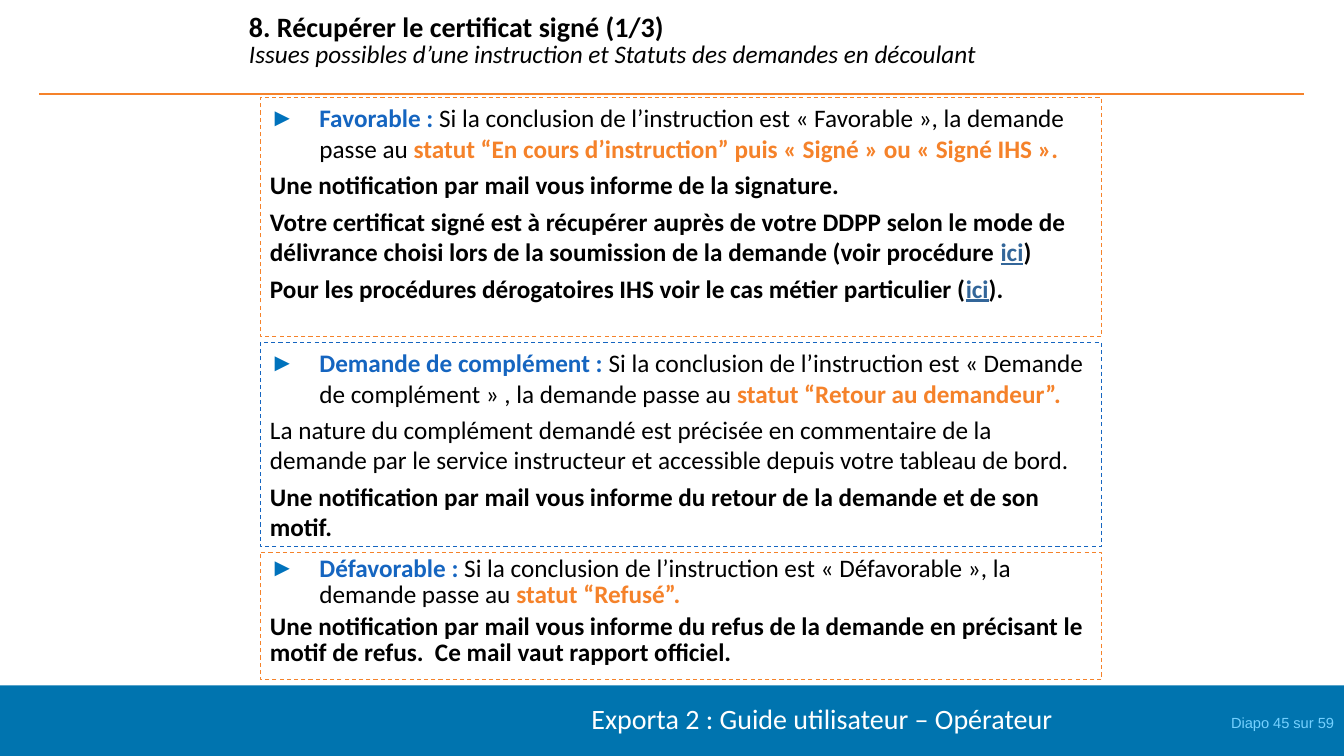
from dataclasses import dataclass

from lxml import etree
from pptx import Presentation
from pptx.dml.color import RGBColor
from pptx.enum.dml import MSO_LINE
from pptx.enum.shapes import MSO_CONNECTOR, MSO_SHAPE
from pptx.enum.text import MSO_ANCHOR, PP_ALIGN
from pptx.oxml.ns import qn
from pptx.util import Pt

RECTANGLE = MSO_SHAPE.RECTANGLE
STRAIGHT = MSO_CONNECTOR.STRAIGHT
DASH = MSO_LINE.DASH
TOP, MIDDLE = MSO_ANCHOR.TOP, MSO_ANCHOR.MIDDLE
LEFT, CENTER, RIGHT = PP_ALIGN.LEFT, PP_ALIGN.CENTER, PP_ALIGN.RIGHT

COLORS = {
    "black": "000000",
    "white": "FFFFFF",
    "band": "0074AF",
    "number": "75D1FF",
    "orange": "F5822A",
    "blue": "1565C0",
    "bullet": "0072BC",
    "link": "336699",
}
BOX_LEFT, BOX_WIDTH = 185.76, 601.2
HANGING = 35.28


@dataclass(frozen=True)
class Run:
    text: str
    color: str = "black"
    bold: bool = False
    italic: bool = False
    underline: bool = False
    size: float = 18
    font: str = "Calibri"


@dataclass(frozen=True)
class Line:
    runs: tuple[Run, ...]
    bullet: bool = False


@dataclass(frozen=True)
class Outcome:
    top: float
    height: float
    border: str
    lines: tuple[Line, ...]
    line_spacing: float = 1.0


def bold(text: str) -> Run:
    return Run(text, bold=True)


def link(text: str) -> Run:
    return Run(text, "link", bold=True, underline=True)


def verdict(label: str, condition: str, status: str) -> Line:
    runs = Run(label, "blue", bold=True), Run(condition), Run(status, "orange", bold=True)
    return Line(runs, bullet=True)


OUTCOMES = (
    Outcome(69.84, 170.64, "orange", (
        verdict(
            "Favorable : ",
            "Si la conclusion de l’instruction est « Favorable », la demande passe au ",
            "statut “En cours d’instruction” puis « Signé » ou « Signé IHS ».",
        ),
        Line((bold("Une notification par mail vous informe de la signature."),)),
        Line((
            bold("Votre certificat signé est à récupérer auprès de votre DDPP selon le mode de "
                 "délivrance choisi lors de la soumission de la demande (voir procédure "),
            link("ici"),
            bold(")"),
        )),
        Line((
            bold("Pour les procédures dérogatoires IHS voir le cas métier particulier ("),
            link("ici"),
            bold(")."),
        )),
    )),
    Outcome(244.8, 145.44, "blue", (
        verdict(
            "Demande de complément : ",
            "Si la conclusion de l’instruction est « Demande de complément » , la demande passe au ",
            "statut “Retour au demandeur”.",
        ),
        Line((Run("La nature du complément demandé est précisée en commentaire de la demande par "
                  "le service instructeur et accessible depuis votre tableau de bord."),)),
        Line((bold("Une notification par mail vous informe du retour de la demande et de son motif."),)),
    )),
    Outcome(394.56, 90.72, "orange", (
        verdict(
            "Défavorable : ",
            "Si la conclusion de l’instruction est « Défavorable », la demande passe au ",
            "statut “Refusé”.",
        ),
        Line((bold("Une notification par mail vous informe du refus de la demande en précisant "
                   "le motif de refus.  Ce mail vaut rapport officiel."),)),
    ), 0.85),
)


def rgb(name: str) -> RGBColor:
    return RGBColor.from_string(COLORS[name])


def add_bullet(paragraph) -> None:
    properties = paragraph._p.get_or_add_pPr()
    properties.set("marL", str(Pt(HANGING)))
    properties.set("indent", str(-Pt(HANGING)))
    color = etree.SubElement(properties, qn("a:buClr"))
    etree.SubElement(color, qn("a:srgbClr"), val=COLORS["bullet"])
    etree.SubElement(properties, qn("a:buFont"), typeface="Arial")
    etree.SubElement(properties, qn("a:buChar"), char="►")


def write_text(shape, lines: tuple[Line, ...], *, align=LEFT, anchor=TOP,
               line_spacing: float = 1.0, space_after: float = 0,
               inset: tuple[float, float] = (7.2, 3.6)) -> None:
    frame = shape.text_frame
    frame.word_wrap = True
    frame.vertical_anchor = anchor
    frame.margin_left = frame.margin_right = Pt(inset[0])
    frame.margin_top = frame.margin_bottom = Pt(inset[1])
    for index, line in enumerate(lines):
        paragraph = frame.add_paragraph() if index else frame.paragraphs[0]
        paragraph.alignment = align
        paragraph.line_spacing = line_spacing
        paragraph.space_after = Pt(space_after)
        if line.bullet:
            add_bullet(paragraph)
        for part in line.runs:
            run = paragraph.add_run()
            run.text = part.text
            run.font.name = part.font
            run.font.size = Pt(part.size)
            run.font.bold = part.bold
            run.font.italic = part.italic
            run.font.underline = part.underline
            run.font.color.rgb = rgb(part.color)


def add_text(slide, left: float, top: float, width: float, height: float,
             *lines: Run, **text_format) -> None:
    shape = slide.shapes.add_textbox(Pt(left), Pt(top), Pt(width), Pt(height))
    write_text(shape, tuple(Line((run,)) for run in lines), **text_format)


def add_rectangle(slide, left: float, top: float, width: float, height: float,
                  fill: str = "", border: str = ""):
    shape = slide.shapes.add_shape(RECTANGLE, Pt(left), Pt(top), Pt(width), Pt(height))
    shape.shadow.inherit = False
    if fill:
        shape.fill.solid()
        shape.fill.fore_color.rgb = rgb(fill)
    else:
        shape.fill.background()
    if border:
        shape.line.color.rgb = rgb(border)
        shape.line.width = Pt(0.75)
        shape.line.dash_style = DASH
    else:
        shape.line.fill.background()
    return shape


def add_rule(slide, left: float, right: float, top: float) -> None:
    rule = slide.shapes.add_connector(STRAIGHT, Pt(left), Pt(top), Pt(right), Pt(top))
    rule.line.color.rgb = rgb("orange")
    rule.line.width = Pt(1.5)
    etree.SubElement(rule._element.spPr, qn("a:effectLst"))


def main() -> None:
    presentation = Presentation()
    presentation.slide_width, presentation.slide_height = Pt(960), Pt(540)
    slide = presentation.slides.add_slide(presentation.slide_layouts[6])

    add_rectangle(slide, 0, 489.6, 960, 50.4, fill="band")
    add_text(slide, 838.08, 506.16, 122, 20.16,
             Run("Diapo 45 sur 59", "number", size=10.5, font="Arial"), align=RIGHT)
    add_text(slide, 316.08, 497.52, 542.16, 31.68,
             Run("Exporta 2 : Guide utilisateur – Opérateur", "white", size=20), align=CENTER)
    add_rule(slide, 28.08, 931.68, 66.96)
    add_text(slide, 177.84, 4.32, 627.84, 51.12,
             Run("8. Récupérer le certificat signé (1/3)", bold=True, size=20),
             Run("Issues possibles d’une instruction et Statuts des demandes en découlant", italic=True),
             anchor=MIDDLE, line_spacing=0.85, inset=(0, 0))
    for outcome in OUTCOMES:
        box = add_rectangle(slide, BOX_LEFT, outcome.top, BOX_WIDTH, outcome.height,
                            border=outcome.border)
        write_text(box, outcome.lines, line_spacing=outcome.line_spacing, space_after=4.5)

    presentation.save("out.pptx")


if __name__ == "__main__":
    main()
